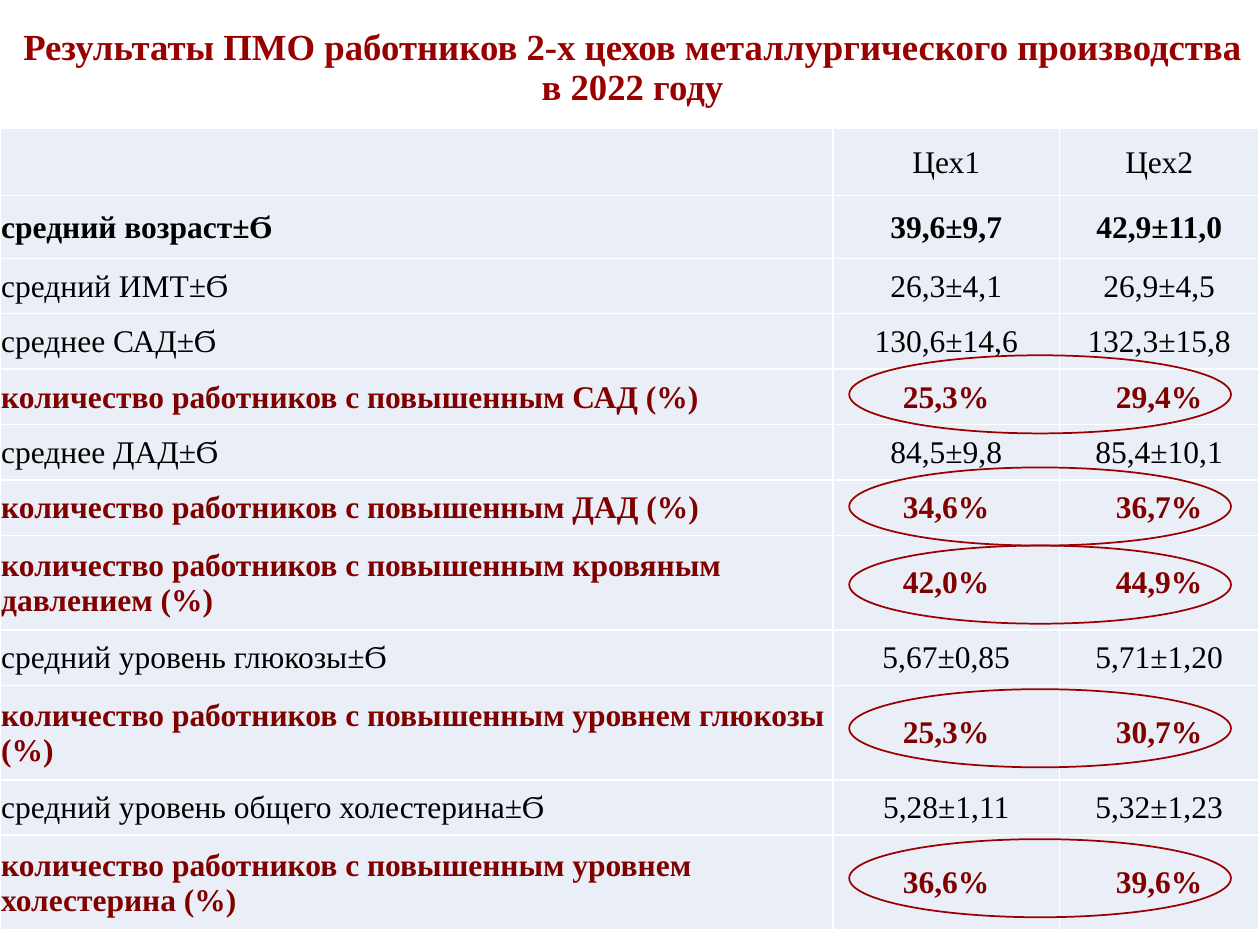
import pptx
import pptx.util
import pptx.dml.color
import pptx.enum.shapes
import pptx.enum.text
import pptx.oxml
import pptx.oxml.ns

Inches, Pt = pptx.util.Inches, pptx.util.Pt
Align, Anchor = pptx.enum.text.PP_ALIGN, pptx.enum.text.MSO_ANCHOR

FONT = "Times New Roman"
BLACK, MAROON, RED = "000000", "800000", "990000"
CELL_FILL, BORDER = "EAEFF7", "FFFFFF"

TITLE = "Результаты ПМО работников 2-х цехов металлургического производства в 2022 году"

# Style name: (colour, bold)
STYLES = {"plain": (BLACK, False), "bold": (BLACK, True), "raised": (MAROON, True)}

# Label, workshop 1, workshop 2, style, row height
ROWS = [
    ("", "Цех1", "Цех2", "plain", 0.53),
    ("средний возраст±Ϭ", "39,6±9,7", "42,9±11,0", "bold", 0.5),
    ("средний ИМТ±Ϭ", "26,3±4,1", "26,9±4,5", "plain", 0.44),
    ("среднее САД±Ϭ", "130,6±14,6", "132,3±15,8", "plain", 0.44),
    ("количество работников с повышенным САД (%)", "25,3%", "29,4%", "raised", 0.44),
    ("среднее ДАД±Ϭ", "84,5±9,8", "85,4±10,1", "plain", 0.44),
    ("количество работников с повышенным ДАД (%)", "34,6%", "36,7%", "raised", 0.44),
    ("количество работников с повышенным кровяным давлением (%)",
     "42,0%", "44,9%", "raised", 0.75),
    ("средний уровень глюкозы±Ϭ", "5,67±0,85", "5,71±1,20", "plain", 0.44),
    ("количество работников с повышенным уровнем глюкозы (%)",
     "25,3%", "30,7%", "raised", 0.75),
    ("средний уровень общего холестерина±Ϭ", "5,28±1,11", "5,32±1,23", "plain", 0.44),
    ("количество работников с повышенным уровнем холестерина (%)",
     "36,6%", "39,6%", "raised", 0.75),
]
COLUMN_WIDTHS = [6.61, 1.8, 1.58]
HIGHLIGHT_TOPS = [2.82, 3.71, 4.33, 5.47, 6.66]


def rgb(value):
    return pptx.dml.color.RGBColor.from_string(value)


def style_font(paragraph, size, color, bold):
    font = paragraph.font
    font.name, font.size, font.bold = FONT, Pt(size), bold
    font.color.rgb = rgb(color)


def add_borders(cell):
    properties = cell._tc.get_or_add_tcPr()
    for position, side in enumerate("LRTB"):
        properties.insert(position, pptx.oxml.parse_xml(
            f'<a:ln{side} {pptx.oxml.ns.nsdecls("a")} w="12700"><a:solidFill>'
            f'<a:srgbClr val="{BORDER}"/></a:solidFill></a:ln{side}>'))


def add_title(slide):
    title = slide.shapes.add_textbox(Inches(0), Inches(0.1), Inches(10.04), Inches(0.89))
    frame = title.text_frame
    frame.word_wrap = True
    frame.vertical_anchor = Anchor.MIDDLE
    heading = frame.paragraphs[0]
    heading.text = TITLE
    heading.alignment = Align.CENTER
    heading.line_spacing = 0.9
    style_font(heading, 21, RED, True)


def add_results(slide):
    results = slide.shapes.add_table(
        len(ROWS), len(COLUMN_WIDTHS), Inches(0), Inches(1.02),
        Inches(sum(COLUMN_WIDTHS)), Inches(sum(row[-1] for row in ROWS))).table
    results.first_row = results.horz_banding = False
    for column, width in zip(results.columns, COLUMN_WIDTHS):
        column.width = Inches(width)
    for r, (*texts, style, height) in enumerate(ROWS):
        results.rows[r].height = Inches(height)
        for c, text in enumerate(texts):
            cell = results.cell(r, c)
            cell.margin_left = cell.margin_right = cell.margin_top = Inches(0.01)
            cell.margin_bottom = 0
            cell.vertical_anchor = Anchor.MIDDLE
            cell.fill.solid()
            cell.fill.fore_color.rgb = rgb(CELL_FILL)
            add_borders(cell)
            entry = cell.text_frame.paragraphs[0]
            entry.text = text
            entry.alignment = Align.CENTER if c else Align.LEFT
            style_font(entry, 18, *STYLES[style])


def add_highlights(slide):
    for top in HIGHLIGHT_TOPS:
        highlight = slide.shapes.add_shape(
            pptx.enum.shapes.MSO_SHAPE.OVAL,
            Inches(6.74), Inches(top), Inches(3.03), Inches(0.62))
        highlight.shadow.inherit = False
        highlight.fill.background()
        highlight.line.color.rgb = rgb(RED)
        highlight.line.width = Pt(1)


def main():
    deck = pptx.Presentation()
    deck.slide_width, deck.slide_height = Inches(10), Inches(7.5)
    slide = deck.slides.add_slide(deck.slide_layouts[6])
    add_title(slide)
    add_results(slide)
    add_highlights(slide)
    deck.save("out.pptx")


if __name__ == "__main__":
    main()
